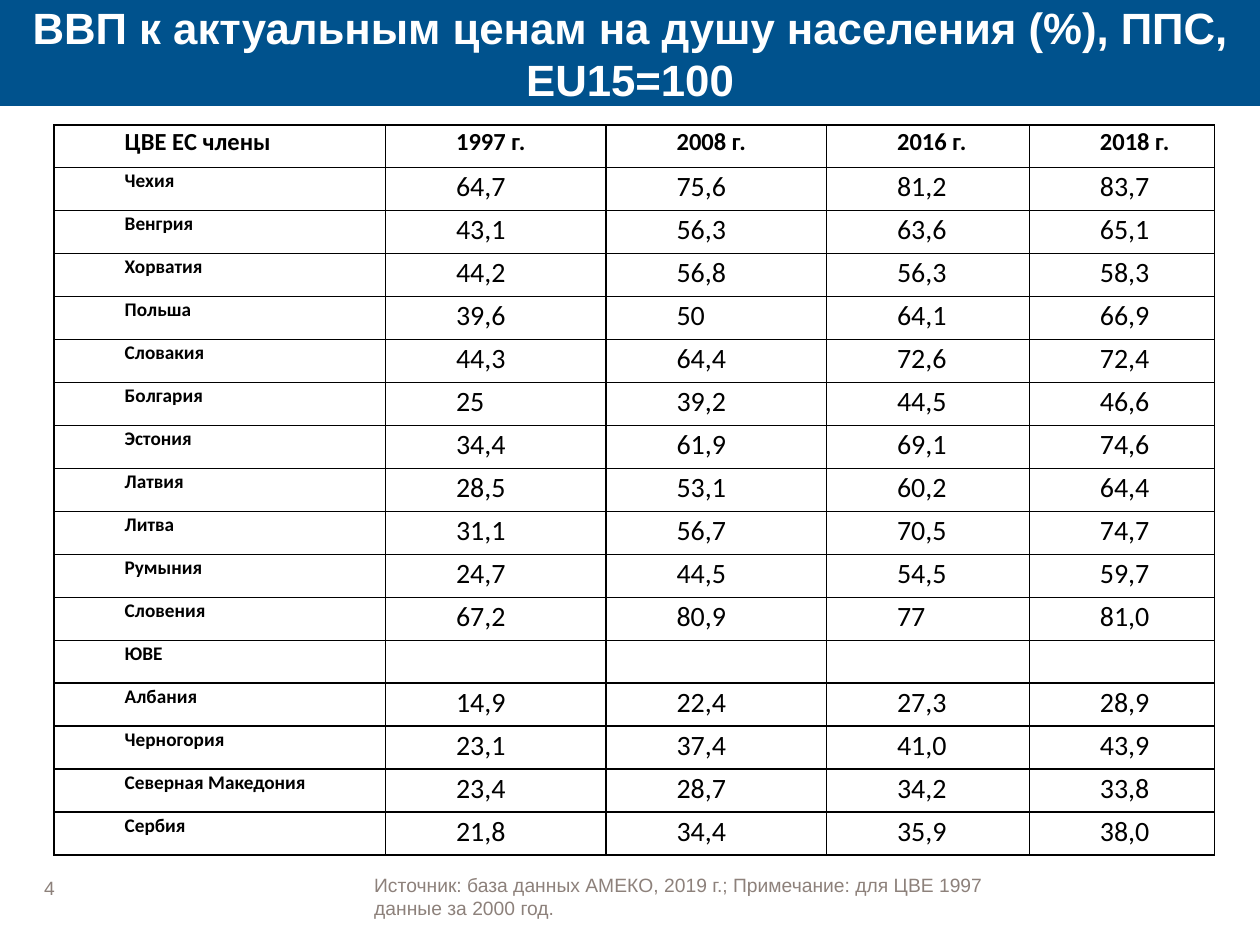
import pptx
import pptx.dml.color
import pptx.enum.shapes
import pptx.enum.text
import pptx.oxml
import pptx.oxml.ns
import pptx.util
from pptx.util import Inches

COLORS = {"banner": "00528D", "title": "FFFFFF", "note": "8D817B", "ink": "000000"}
ALIGN = pptx.enum.text.PP_ALIGN
ANCHOR = pptx.enum.text.MSO_ANCHOR

COLUMN_WIDTHS = (2.63, 1.75, 1.75, 1.61, 1.47)
TABLE_HEIGHT = 5.8
ROWS = (
    ("ЦВЕ EС члены", "1997 г.", "2008 г.", "2016 г.", "2018 г."),
    ("Чехия", "64,7", "75,6", "81,2", "83,7"),
    ("Венгрия", "43,1", "56,3", "63,6", "65,1"),
    ("Хорватия", "44,2", "56,8", "56,3", "58,3"),
    ("Польша", "39,6", "50", "64,1", "66,9"),
    ("Словакия", "44,3", "64,4", "72,6", "72,4"),
    ("Болгария", "25", "39,2", "44,5", "46,6"),
    ("Эстония", "34,4", "61,9", "69,1", "74,6"),
    ("Латвия", "28,5", "53,1", "60,2", "64,4"),
    ("Литва", "31,1", "56,7", "70,5", "74,7"),
    ("Румыния", "24,7", "44,5", "54,5", "59,7"),
    ("Словения", "67,2", "80,9", "77", "81,0"),
    ("ЮВЕ", "", "", "", ""),
    ("Албания", "14,9", "22,4", "27,3", "28,9"),
    ("Черногория", "23,1", "37,4", "41,0", "43,9"),
    ("Северная Македония", "23,4", "28,7", "34,2", "33,8"),
    ("Сербия", "21,8", "34,4", "35,9", "38,0"),
)


def rgb(name):
    return pptx.dml.color.RGBColor.from_string(COLORS[name])


def write(frame, text, *, size, color, font="Arial", bold=False, align=ALIGN.LEFT):
    para = frame.paragraphs[0]
    para.alignment = align
    span = para.add_run()
    span.text = text
    span.font.name = font
    span.font.size = pptx.util.Pt(size)
    span.font.bold = bold
    span.font.color.rgb = rgb(color)
    return para


def set_frame(frame, anchor, side=0):
    """Wrap the text, with insets at the left and right only."""
    frame.word_wrap = True
    frame.vertical_anchor = anchor
    frame.margin_left = frame.margin_right = Inches(side)
    frame.margin_top = frame.margin_bottom = 0


def add_banner(slide, text):
    banner = slide.shapes.add_shape(
        pptx.enum.shapes.MSO_SHAPE.RECTANGLE, 0, 0, Inches(10), Inches(0.84))
    banner.shadow.inherit = False
    banner.fill.solid()
    banner.fill.fore_color.rgb = rgb("banner")
    banner.line.fill.background()
    set_frame(banner.text_frame, ANCHOR.MIDDLE, side=0.02)
    write(banner.text_frame, text, size=25, color="title", bold=True, align=ALIGN.CENTER)


def add_note(slide, text, left, top, width):
    box = slide.shapes.add_textbox(Inches(left), Inches(top), Inches(width), Inches(0.35))
    set_frame(box.text_frame, ANCHOR.BOTTOM)
    write(box.text_frame, text, size=11, color="note")


def add_borders(cell):
    properties = cell._tc.get_or_add_tcPr()
    for position, side in enumerate(("lnL", "lnR", "lnT", "lnB")):
        line = pptx.oxml.parse_xml(
            f'<a:{side} {pptx.oxml.ns.nsdecls("a")} w="12700"><a:solidFill>'
            f'<a:srgbClr val="{COLORS["ink"]}"/></a:solidFill></a:{side}>')
        properties.insert(position, line)


def fill_cell(cell, text, size, bold):
    cell.margin_left = cell.margin_right = Inches(0.07)
    cell.margin_top = cell.margin_bottom = 0
    cell.fill.background()
    add_borders(cell)
    if text:
        para = write(cell.text_frame, text, size=size, color="ink", font="Calibri",
                     bold=bold, align=ALIGN.JUSTIFY)
        para.line_spacing = 1.07
        properties = para._p.get_or_add_pPr()
        properties.set("marL", str(Inches(0.49)))
        properties.set("indent", "0")


def add_gdp_table(slide):
    table = slide.shapes.add_table(
        len(ROWS), len(COLUMN_WIDTHS), Inches(0.43), Inches(0.99),
        Inches(sum(COLUMN_WIDTHS)), Inches(TABLE_HEIGHT)).table
    table.first_row = table.horz_banding = False
    for column, width in zip(table.columns, COLUMN_WIDTHS):
        column.width = Inches(width)
    for row_number, values in enumerate(ROWS):
        for column_number, text in enumerate(values):
            is_header, is_country = row_number == 0, column_number == 0
            size = 14 if is_header else 11 if is_country else 16
            fill_cell(table.cell(row_number, column_number), text, size,
                      bold=is_header or is_country)


def main():
    deck = pptx.Presentation()
    deck.slide_width, deck.slide_height = Inches(10), Inches(7.5)
    slide = deck.slides.add_slide(deck.slide_layouts[6])
    add_note(slide, "4", 0.35, 6.79, 0.39)
    add_banner(slide, "ВВП к актуальным ценам на душу населения (%), ППС, EU15=100")
    add_gdp_table(slide)
    add_note(slide, "Источник: база данных AMEКO, 2019 г.; Примечание: для ЦВЕ 1997 "
                    "данные за 2000 год.", 2.97, 6.95, 4.96)
    deck.save("out.pptx")


if __name__ == "__main__":
    main()
